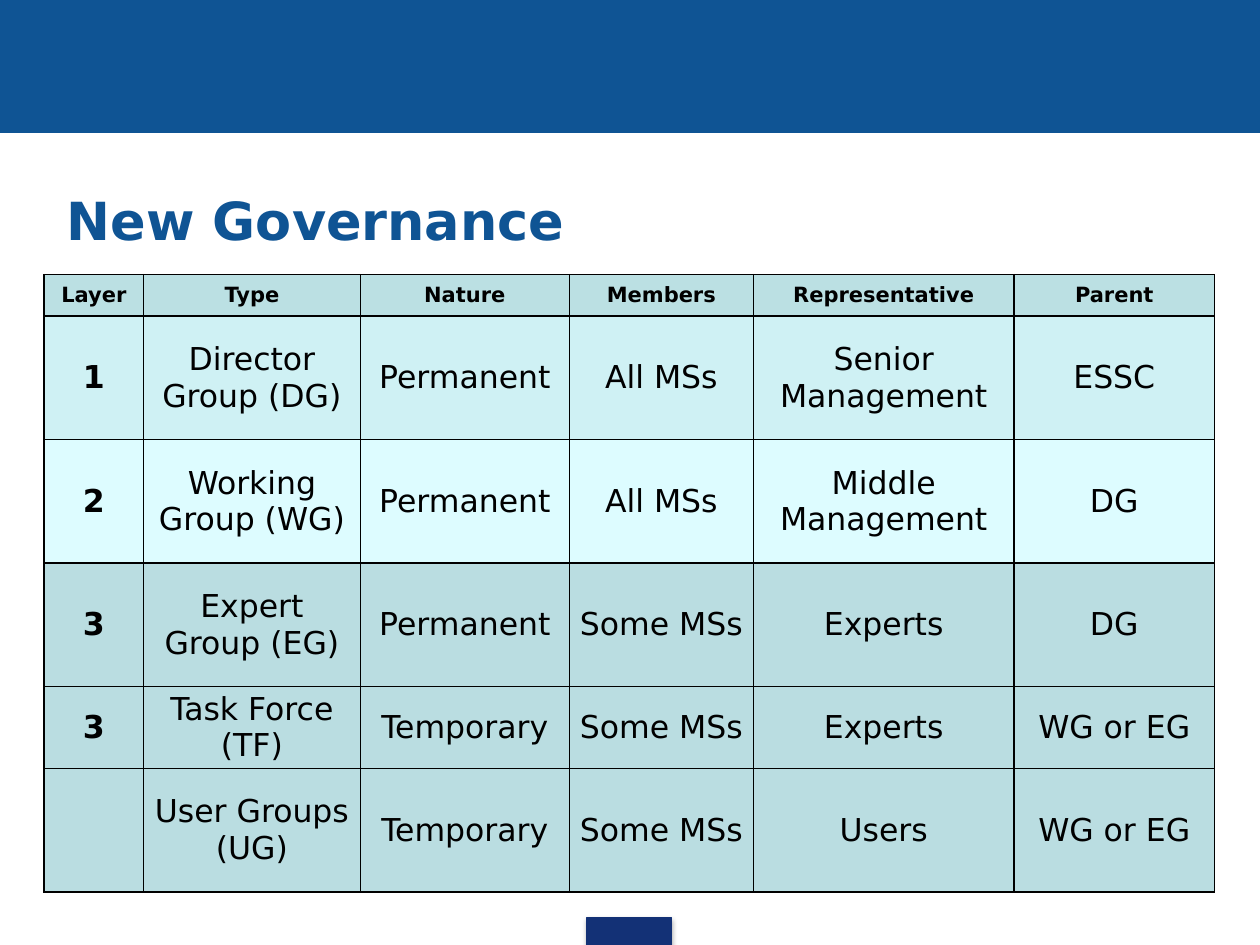
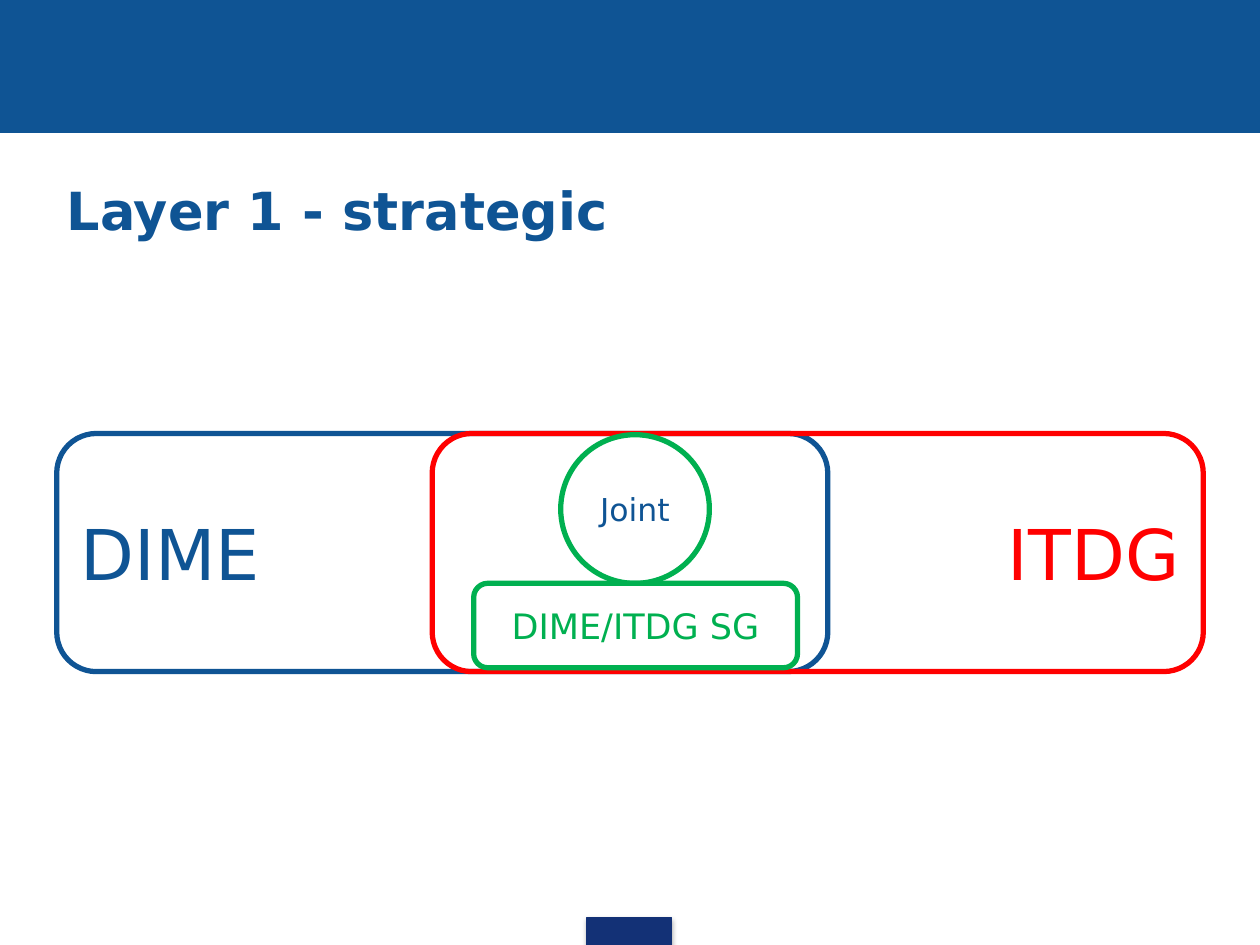
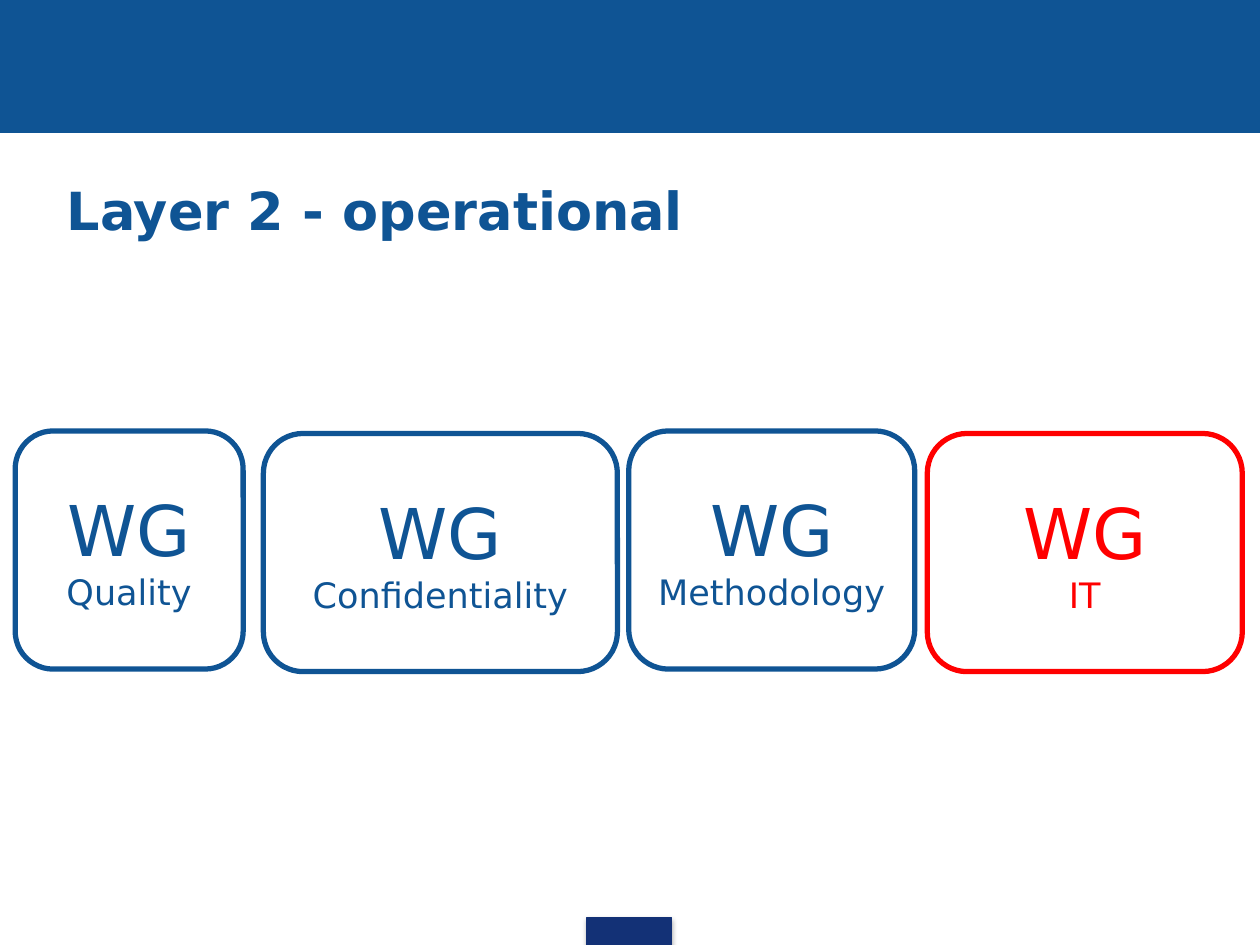
from dataclasses import dataclass

from lxml import etree
from pptx import Presentation
from pptx import util as u
from pptx.dml import color
from pptx.enum import shapes, text
from pptx.oxml import ns


@dataclass(frozen=True)
class Theme:
    font: str = "DejaVu Sans"
    # Colours
    blue: str = "0F5494"
    navy: str = "133176"
    red: str = "FF0000"
    green: str = "00B050"
    black: str = "000000"
    header_fill: str = "BBE0E3"
    strategic_fill: str = "CFF1F4"
    operational_fill: str = "DDFCFF"
    expert_fill: str = "BADDE1"
    # Type sizes in points
    title: int = 30
    group: int = 40
    subgroup: int = 20
    body: int = 18
    header: int = 12
    # Line widths in points
    outline: float = 3
    hairline: float = 0.75
    border: float = 1


LEFT, CENTER, RIGHT = text.PP_ALIGN.LEFT, text.PP_ALIGN.CENTER, text.PP_ALIGN.RIGHT
RECT, ROUND, OVAL = (
    shapes.MSO_SHAPE.RECTANGLE,
    shapes.MSO_SHAPE.ROUNDED_RECTANGLE,
    shapes.MSO_SHAPE.OVAL,
)


def rgb(value):
    return color.RGBColor.from_string(value)


def add_xml(parent, tag, **attributes):
    return etree.SubElement(parent, ns.qn(tag), attributes)


class Deck:
    def __init__(self, theme):
        self.theme = theme
        self.prs = Presentation()
        self.prs.slide_width, self.prs.slide_height = u.Inches(10), u.Inches(7.5)
        self.slide = None

    def new_slide(self, title, title_top=1.15):
        """Start a slide with its band, footer mark and title."""
        t = self.theme
        self.slide = self.prs.slides.add_slide(self.prs.slide_layouts[5])
        self.shape(RECT, (0, 0, 10, 1.05), t.blue, t.hairline, fill=t.blue)
        footer = self.shape(RECT, (4.66, 7.28, 0.67, 0.22), t.navy, t.hairline, fill=t.navy)
        self.soft_shadow(footer)

        heading = self.slide.shapes.title
        heading.left, heading.top = u.Inches(0.43), u.Inches(title_top)
        heading.width, heading.height = u.Inches(9), u.Inches(1.02)
        heading.text_frame.auto_size = text.MSO_AUTO_SIZE.NONE
        self.add_lines(heading.text_frame, [(title, t.title)], t.blue, LEFT, bold=True)

    def add_lines(self, frame, lines, ink, align=CENTER, bold=False):
        """Fill a text frame with one paragraph for each (wording, size)."""
        frame.word_wrap = True
        frame.vertical_anchor = text.MSO_ANCHOR.MIDDLE
        for index, (wording, size) in enumerate(lines):
            paragraph = frame.add_paragraph() if index else frame.paragraphs[0]
            paragraph.alignment = align
            run = paragraph.add_run()
            run.text = wording
            run.font.name, run.font.size = self.theme.font, u.Pt(size)
            run.font.bold = bold
            run.font.color.rgb = rgb(ink)

    def shape(self, kind, box, line, width, fill=None):
        shape = self.slide.shapes.add_shape(kind, *map(u.Inches, box))
        shape.shadow.inherit = False
        if fill:
            shape.fill.solid()
            shape.fill.fore_color.rgb = rgb(fill)
        else:
            shape.fill.background()
        shape.line.color.rgb = rgb(line)
        shape.line.width = u.Pt(width)
        return shape

    def soft_shadow(self, shape):
        effects = shape.element.spPr.find(ns.qn("a:effectLst"))
        shadow = add_xml(effects, "a:outerShdw", blurRad=str(u.Pt(3.1)), dist=str(u.Pt(1.8)),
                         dir="5400000", rotWithShape="0")
        ink = add_xml(shadow, "a:srgbClr", val=self.theme.black)
        add_xml(ink, "a:alpha", val="35000")

    def group(self, box, lines, line, ink=None, align=CENTER, kind=ROUND):
        """Draw an outlined governance group with its label."""
        outline = self.shape(kind, box, line, self.theme.outline)
        self.add_lines(outline.text_frame, lines, ink or line, align)

    def cell(self, cell, wording, fill, size, bold):
        cell.margin_left = cell.margin_right = u.Inches(0.07)
        cell.margin_top = cell.margin_bottom = 0
        cell.vertical_anchor = text.MSO_ANCHOR.MIDDLE
        properties = cell._tc.get_or_add_tcPr()
        for side in ("a:lnL", "a:lnR", "a:lnT", "a:lnB"):
            edge = add_xml(properties, side, w=str(u.Pt(self.theme.border)))
            add_xml(add_xml(edge, "a:solidFill"), "a:srgbClr", val=self.theme.black)
        cell.fill.solid()
        cell.fill.fore_color.rgb = rgb(fill)
        if wording:
            lines = [(part, size) for part in wording.split("\n")]
            self.add_lines(cell.text_frame, lines, self.theme.black, bold=bold)

    def table(self, left, top, widths, heights, rows, fills):
        t = self.theme
        grid = self.slide.shapes.add_table(
            len(rows), len(widths), u.Inches(left), u.Inches(top),
            u.Inches(sum(widths)), u.Inches(sum(heights))).table
        for column, width in zip(grid.columns, widths):
            column.width = u.Inches(width)
        for r, (height, wordings, fill) in enumerate(zip(heights, rows, fills)):
            grid.rows[r].height = u.Inches(height)
            for c, wording in enumerate(wordings):
                size = t.body if r else t.header
                self.cell(grid.cell(r, c), wording, fill, size, bold=r == 0 or c == 0)


def governance(deck):
    t = deck.theme
    deck.new_slide("New Governance", title_top=1.23)
    layers = [
        ("Layer", "Type", "Nature", "Members", "Representative", "Parent"),
        ("1", "Director Group (DG)", "Permanent", "All MSs", "Senior Management", "ESSC"),
        ("2", "Working Group (WG)", "Permanent", "All MSs", "Middle\nManagement", "DG"),
        ("3", "Expert Group (EG)", "Permanent", "Some MSs", "Experts", "DG"),
        ("3", "Task Force (TF)", "Temporary", "Some MSs", "Experts", "WG or EG"),
        ("", "User Groups (UG)", "Temporary", "Some MSs", "Users", "WG or EG"),
    ]
    fills = [t.header_fill, t.strategic_fill, t.operational_fill] + [t.expert_fill] * 3
    deck.table(0.35, 2.18, (0.79, 1.72, 1.66, 1.46, 2.07, 1.59),
               (0.33, 0.98, 0.98, 0.98, 0.65, 0.98), layers, fills)


def strategic_layer(deck):
    t = deck.theme
    deck.new_slide("Layer 1 - strategic")
    # Overlapping director groups
    for left, name, line, align in ((0.45, "DIME", t.blue, LEFT), (3.43, "ITDG", t.red, RIGHT)):
        deck.group((left, 3.44, 6.12, 1.89), [(name, t.group)], line, align=align)
    # Shared bodies in the overlap
    deck.group((4.45, 3.45, 1.18, 1.18), [("Joint", t.body)], t.green, ink=t.blue, kind=OVAL)
    deck.group((3.76, 4.63, 2.57, 0.67), [("DIME/ITDG SG", t.subgroup)], t.green)


def operational_layer(deck):
    t = deck.theme
    deck.new_slide("Layer 2 - operational")
    # Working groups: topic, left, top, width, colour
    working_groups = (
        ("Confidentiality", 2.09, 3.44, 2.81, t.blue),
        ("IT", 7.36, 3.44, 2.5, t.red),
        ("Quality", 0.12, 3.42, 1.81, t.blue),
        ("Methodology", 4.99, 3.42, 2.27, t.blue),
    )
    for topic, left, top, width, line in working_groups:
        deck.group((left, top, width, 1.89), [("WG", t.group), (topic, t.subgroup)], line)


def main():
    deck = Deck(Theme())
    governance(deck)
    strategic_layer(deck)
    operational_layer(deck)
    deck.prs.save("out.pptx")


if __name__ == "__main__":
    main()
